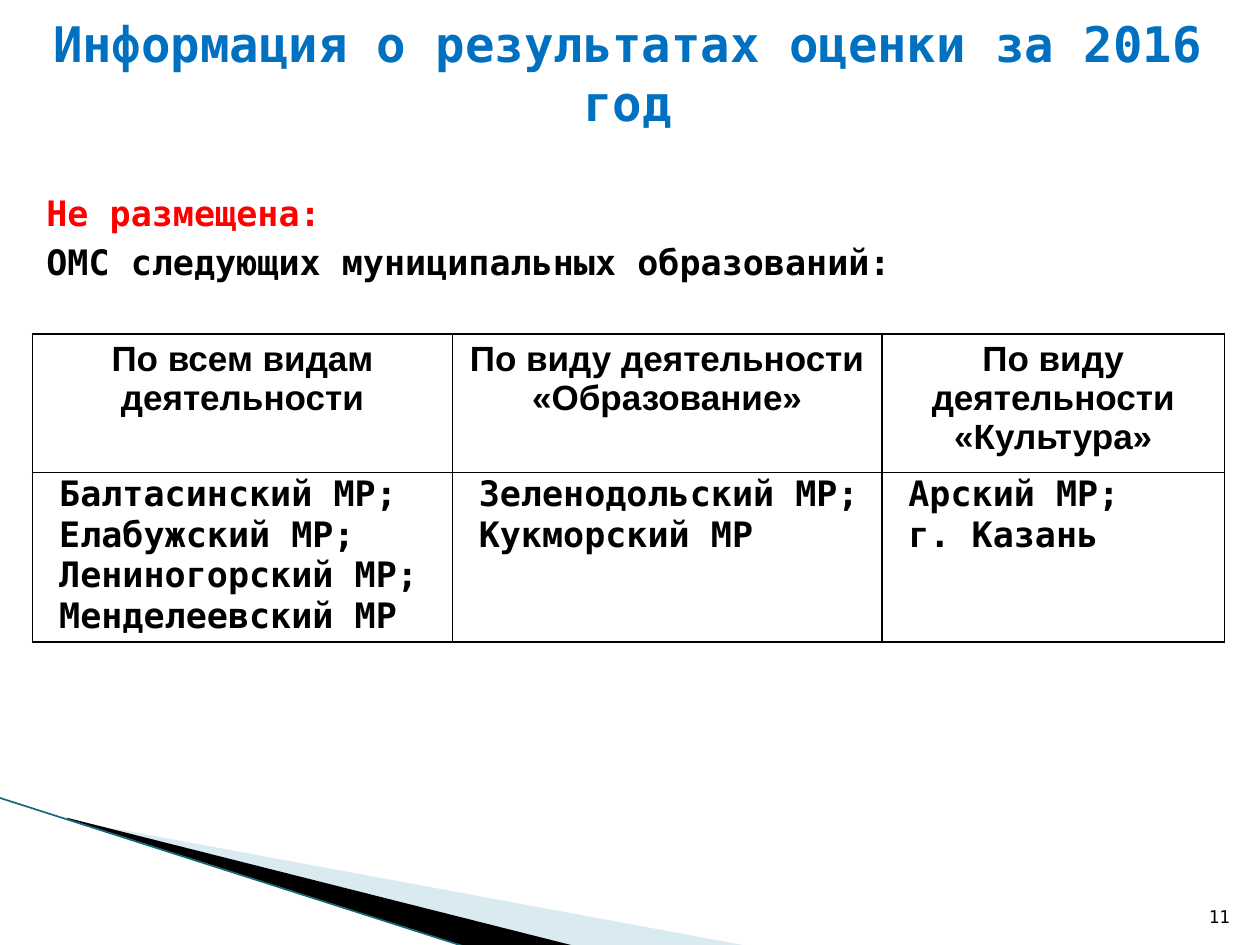
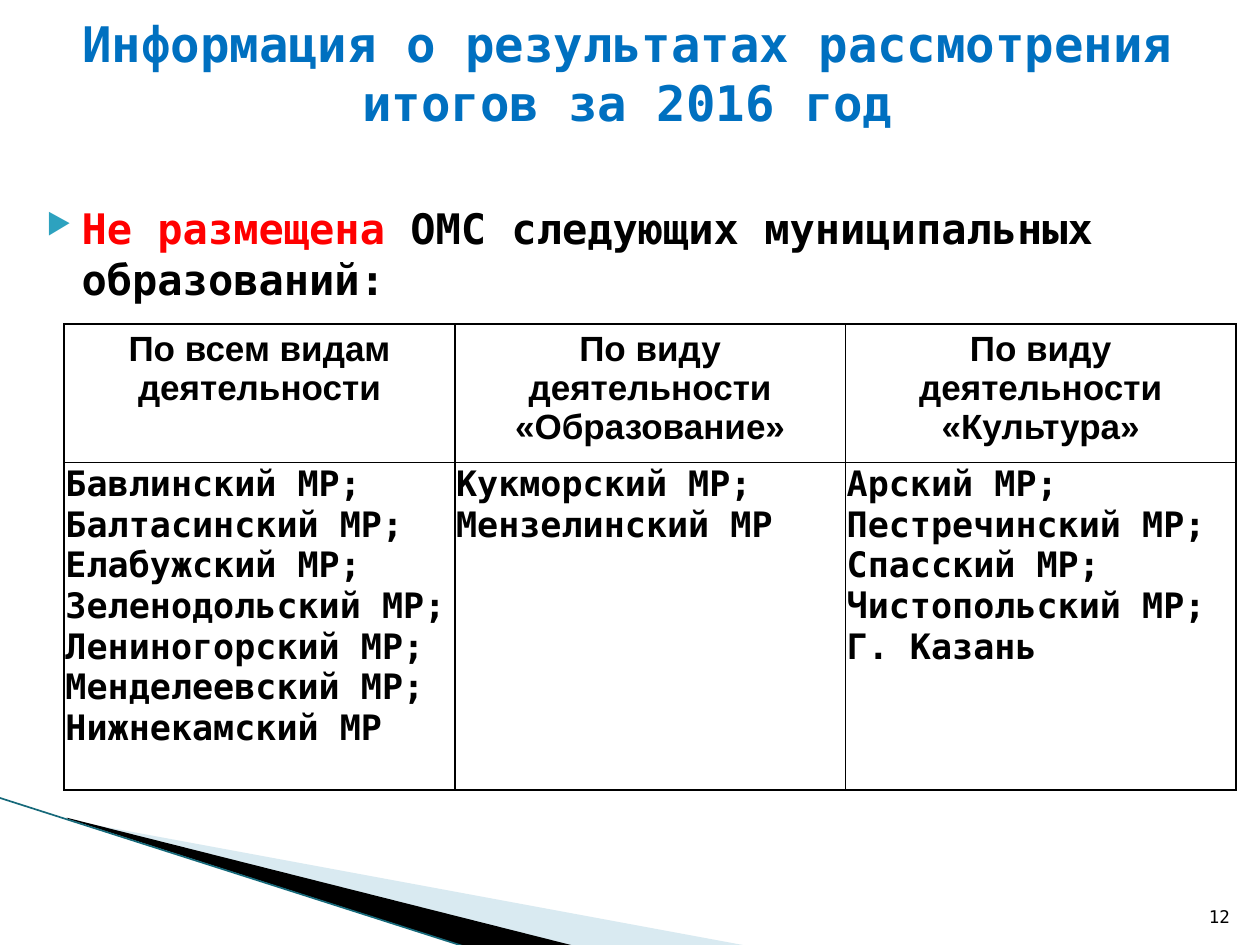
from typing import NamedTuple

from lxml import etree
from pptx import Presentation
from pptx import util as u
from pptx.dml.color import RGBColor
from pptx.enum import shapes, text
from pptx.oxml.ns import qn

MONO, SANS = "DejaVu Sans Mono", "Arial"
BLACK, RED, BLUE, WHITE = "000000", "FF0000", "0070C0", "FFFFFF"
TEAL, PALE, EDGE = "2DA2BF", "A0CBDC", "16697A"
LEFT, MID, RIGHT = text.PP_ALIGN.LEFT, text.PP_ALIGN.CENTER, text.PP_ALIGN.RIGHT
TOP, CENTER, BASE = (text.MSO_ANCHOR.TOP, text.MSO_ANCHOR.MIDDLE,
                     text.MSO_ANCHOR.BOTTOM)


class Run(NamedTuple):
    words: str
    size: float
    color: str = BLACK
    font: str = MONO
    bold: bool = True


class Para(NamedTuple):
    runs: list[Run]
    align: int = LEFT
    left: float = 0
    first: float = 0
    before: float = 0
    bullet: bool = False


class Wedge(NamedTuple):
    points: list[tuple[float, float]]
    color: str
    alpha: int = 100


class Grid(NamedTuple):
    left: float
    top: float
    cols: list[float]
    rows: list[float]
    heads: list[str]
    lists: list[list[str]]
    first: float = 0


class Page(NamedTuple):
    number: int
    title: str
    top: float
    body: list[Para]
    grid: Grid


HEADS = ["По всем видам деятельности",
         "По виду деятельности «Образование»",
         "По виду деятельности «Культура»"]
GROUPS = "ОМС следующих муниципальных образований:"

WEDGES = [
    Wedge([(0.55, 6.51), (5.95, 7.51), (4.56, 7.51), (0.55, 6.5)], PALE, 40),
    Wedge([(0.53, 6.49), (4.57, 7.51), (3.72, 7.52), (0.54, 6.5)], BLACK),
]

PAGES = [
    Page(11, "Информация о результатах оценки за 2016 год", 1.47,
         [Para([Run("Не размещена:", 20, RED)], left=0.12),
          Para([Run(GROUPS, 20)], left=0.12, before=4)],
         Grid(0.26, 2.65, [3.33, 3.41, 2.72], [1.03, 1.3], HEADS,
              [["Балтасинский МР;", "Елабужский МР;", "Лениногорский МР;",
                "Менделеевский МР"],
               ["Зеленодольский МР;", "Кукморский МР"],
               ["Арский МР;", "г. Казань"]], first=0.2)),
    Page(12, "Информация о результатах рассмотрения итогов за 2016 год", 1.56,
         [Para([Run("Не размещена ", 24, RED), Run(GROUPS, 24)],
               left=0.4, first=-0.28, bullet=True)],
         Grid(0.51, 2.57, [3.1] * 3, [1.03, 2.6], HEADS,
              [["Бавлинский МР;", "Балтасинский МР;", "Елабужский МР;",
                "Зеленодольский МР;", "Лениногорский МР;",
                "Менделеевский МР;", "Нижнекамский МР"],
               ["Кукморский МР;", "Мензелинский МР"],
               ["Арский МР;", "Пестречинский МР;", "Спасский МР;",
                "Чистопольский МР;", "Г. Казань"]])),
]


def rgb(code: str) -> RGBColor:
    return RGBColor.from_string(code)


def apply(item, values: dict) -> None:
    for name, value in values.items():
        setattr(item, name, value)


def add(parent, tag: str, **attrs):
    node = etree.SubElement(parent, qn(tag))
    for name, value in attrs.items():
        node.set(name, str(value))
    return node


def write(frame, paras: list[Para]) -> None:
    for i, para in enumerate(paras):
        p = frame.add_paragraph() if i else frame.paragraphs[0]
        apply(p, {"alignment": para.align, "space_before": u.Pt(para.before)})
        props = p._p.get_or_add_pPr()
        props.set("marL", str(u.Inches(para.left)))
        props.set("indent", str(u.Inches(para.first)))
        if para.bullet:
            add(add(props, "a:buClr"), "a:srgbClr", val=TEAL)
            add(props, "a:buSzPct", val=68000)
            add(props, "a:buChar", char="▶")
        for run in para.runs:
            r = p.add_run()
            r.text = run.words
            apply(r.font, {"name": run.font, "size": u.Pt(run.size),
                           "bold": run.bold})
            r.font.color.rgb = rgb(run.color)


def label(slide, box: tuple, paras: list[Para], anchor=TOP) -> None:
    frame = slide.shapes.add_textbox(*map(u.Inches, box)).text_frame
    apply(frame, {"word_wrap": True, "vertical_anchor": anchor})
    write(frame, paras)


def wedge(slide, part: Wedge) -> None:
    spots = [(u.Inches(x), u.Inches(y)) for x, y in part.points]
    pen = slide.shapes.build_freeform(*spots[0])
    pen.add_line_segments(spots[1:], close=True)
    shape = pen.convert_to_shape()
    shape.shadow.inherit = False
    shape.fill.solid()
    shape.fill.fore_color.rgb = rgb(part.color)
    shape.line.fill.background()
    if part.alpha < 100:
        color = shape._element.spPr.find(qn("a:solidFill"))[0]
        add(color, "a:alpha", val=part.alpha * 1000)


def decor(slide) -> None:
    for part in WEDGES:
        wedge(slide, part)
    edge = slide.shapes.add_connector(
        shapes.MSO_CONNECTOR.STRAIGHT, *map(u.Inches, (-0.01, 6.33, 3.71, 7.52)))
    edge.line.color.rgb = rgb(EDGE)
    edge.line.width = u.Pt(0.95)
    add(edge._element.spPr, "a:effectLst")


def border(cell) -> None:
    props = cell._tc.get_or_add_tcPr()
    for i, side in enumerate(("L", "R", "T", "B")):
        line = etree.Element(qn(f"a:ln{side}"), w=str(u.Pt(1)))
        add(add(line, "a:solidFill"), "a:srgbClr", val=BLACK)
        props.insert(i, line)


def table(slide, grid: Grid) -> None:
    box = (grid.left, grid.top, sum(grid.cols), sum(grid.rows))
    tab = slide.shapes.add_table(2, len(grid.cols), *map(u.Inches, box)).table
    apply(tab, {"first_row": False, "horz_banding": False})
    for col, width in zip(tab.columns, grid.cols):
        col.width = u.Inches(width)
    for row, height in zip(tab.rows, grid.rows):
        row.height = u.Inches(height)
    thin = u.Inches(0.01)
    for i, (head, names) in enumerate(zip(grid.heads, grid.lists)):
        upper, lower = tab.cell(0, i), tab.cell(1, i)
        write(upper.text_frame, [Para([Run(head, 20, font=SANS)], MID)])
        write(lower.text_frame,
              [Para([Run(name, 20)], first=grid.first) for name in names])
        apply(lower, {"margin_left": thin, "margin_top": thin,
                      "margin_right": thin, "margin_bottom": 0})
        for cell in (upper, lower):
            cell.fill.solid()
            cell.fill.fore_color.rgb = rgb(WHITE)
            border(cell)


def build(deck, page: Page) -> None:
    slide = deck.slides.add_slide(deck.slide_layouts[6])
    decor(slide)
    # Body, page number and title
    label(slide, (0.15, page.top, 9.66, 1), page.body)
    label(slide, (9.46, 7.01, 0.4, 0.4),
          [Para([Run(str(page.number), 10, bold=False)], RIGHT)], BASE)
    label(slide, (0.15, 0.13, 9.66, 0.89),
          [Para([Run(page.title, 28, BLUE)], MID)], CENTER)
    table(slide, page.grid)


def main() -> None:
    deck = Presentation()
    apply(deck, {"slide_width": u.Inches(10), "slide_height": u.Inches(7.5)})
    for page in PAGES:
        build(deck, page)
    deck.save("out.pptx")


if __name__ == "__main__":
    main()
